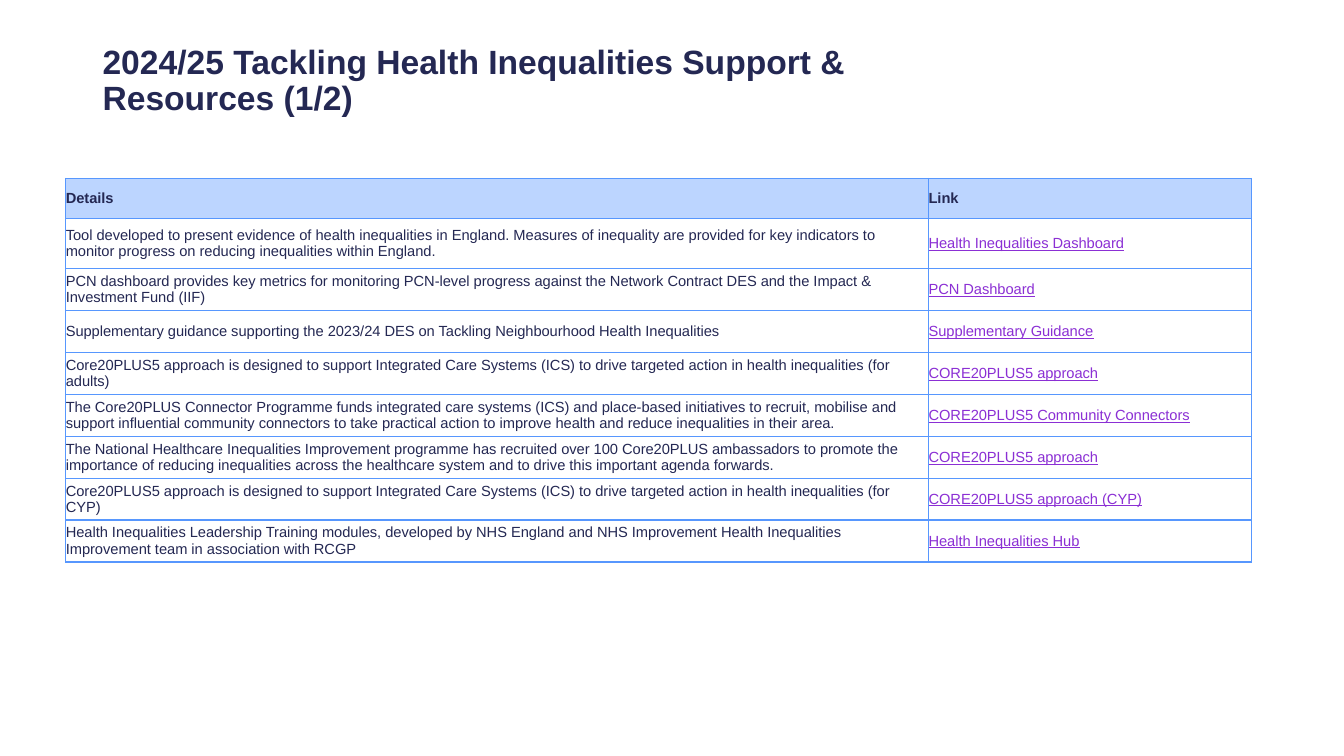
from lxml import etree
from pptx import Presentation
from pptx.dml.color import RGBColor
from pptx.enum.text import MSO_ANCHOR
from pptx.oxml.ns import qn
from pptx.util import Pt

TITLE = "2024/25 Tackling Health Inequalities Support & Resources (1/2)"
HEADER = ("Details", "Link")
RESOURCES = [
    ("Tool developed to present evidence of health inequalities in England. Measures of inequality are provided for key indicators to monitor progress on reducing inequalities within England.",
     "Health Inequalities Dashboard"),
    ("PCN dashboard provides key metrics for monitoring PCN-level progress against the Network Contract DES and the Impact & Investment Fund (IIF)",
     "PCN Dashboard"),
    ("Supplementary guidance supporting the 2023/24 DES on Tackling Neighbourhood Health Inequalities",
     "Supplementary Guidance"),
    ("Core20PLUS5 approach is designed to support Integrated Care Systems (ICS) to drive targeted action in health inequalities (for adults)",
     "CORE20PLUS5 approach"),
    ("The Core20PLUS Connector Programme funds integrated care systems (ICS) and place-based initiatives to recruit, mobilise and support influential community connectors to take practical action to improve health and reduce inequalities in their area.",
     "CORE20PLUS5 Community Connectors"),
    ("The National Healthcare Inequalities Improvement programme has recruited over 100 Core20PLUS ambassadors to promote the importance of reducing inequalities across the healthcare system and to drive this important agenda forwards.",
     "CORE20PLUS5 approach"),
    ("Core20PLUS5 approach is designed to support Integrated Care Systems (ICS) to drive targeted action in health inequalities (for CYP)",
     "CORE20PLUS5 approach (CYP)"),
    ("Health Inequalities Leadership Training modules, developed by NHS England and NHS Improvement Health Inequalities Improvement team in association with RCGP",
     "Health Inequalities Hub"),
]

COLORS = {"text": "242853", "link": "8B2FD4", "header": "BCD5FF", "border": "5797FE"}
FONT = "Arial"
COLUMN_WIDTHS = (616.3, 230.4)
ROW_HEIGHTS = [28.4, 36] + [29.95] * (len(RESOURCES) - 1)
MIDDLE = MSO_ANCHOR.MIDDLE


def format_text(paragraph, size, color, bold=False, underline=False):
    for run in paragraph.runs:
        font = run.font
        font.name = FONT
        font.size = Pt(size)
        font.bold = bold
        font.underline = underline
        font.color.rgb = RGBColor.from_string(COLORS[color])


def add_borders(cell):
    properties = cell._tc.get_or_add_tcPr()
    for side in ("lnL", "lnR", "lnT", "lnB"):
        line = etree.SubElement(properties, qn(f"a:{side}"), w=str(Pt(1)))
        fill = etree.SubElement(line, qn("a:solidFill"))
        etree.SubElement(fill, qn("a:srgbClr"), val=COLORS["border"])


def add_title(slide):
    title = slide.shapes.add_textbox(Pt(66.2), Pt(28.8), Pt(591.8), Pt(104.4))
    title.text_frame.word_wrap = True
    title.text_frame.text = TITLE
    paragraph = title.text_frame.paragraphs[0]
    paragraph.line_spacing = 0.9
    format_text(paragraph, 24, "text", bold=True)


def fill_cell(cell, text, is_header, is_link):
    cell.margin_left = cell.margin_right = cell.margin_top = cell.margin_bottom = 0
    cell.vertical_anchor = MIDDLE
    cell.text_frame.text = text
    color = "link" if is_link else "text"
    format_text(cell.text_frame.paragraphs[0], 10.5, color, is_header, is_link)
    add_borders(cell)
    if is_header:
        cell.fill.solid()
        cell.fill.fore_color.rgb = RGBColor.from_string(COLORS["header"])
    else:
        cell.fill.background()


def add_resource_table(slide):
    rows = [HEADER] + RESOURCES
    frame = slide.shapes.add_table(
        len(rows), len(HEADER), Pt(47), Pt(127.5),
        Pt(sum(COLUMN_WIDTHS)), Pt(sum(ROW_HEIGHTS)))
    table = frame.table
    table.horz_banding = False
    for column, width in zip(table.columns, COLUMN_WIDTHS):
        column.width = Pt(width)
    for row, height in zip(table.rows, ROW_HEIGHTS):
        row.height = Pt(height)
    for row_index, texts in enumerate(rows):
        for column_index, text in enumerate(texts):
            is_header = row_index == 0
            is_link = column_index == 1 and not is_header
            fill_cell(table.cell(row_index, column_index), text, is_header, is_link)


def main():
    presentation = Presentation()
    presentation.slide_width = Pt(960)
    presentation.slide_height = Pt(540)
    slide = presentation.slides.add_slide(presentation.slide_layouts[6])
    add_title(slide)
    add_resource_table(slide)
    presentation.save("out.pptx")


if __name__ == "__main__":
    main()
